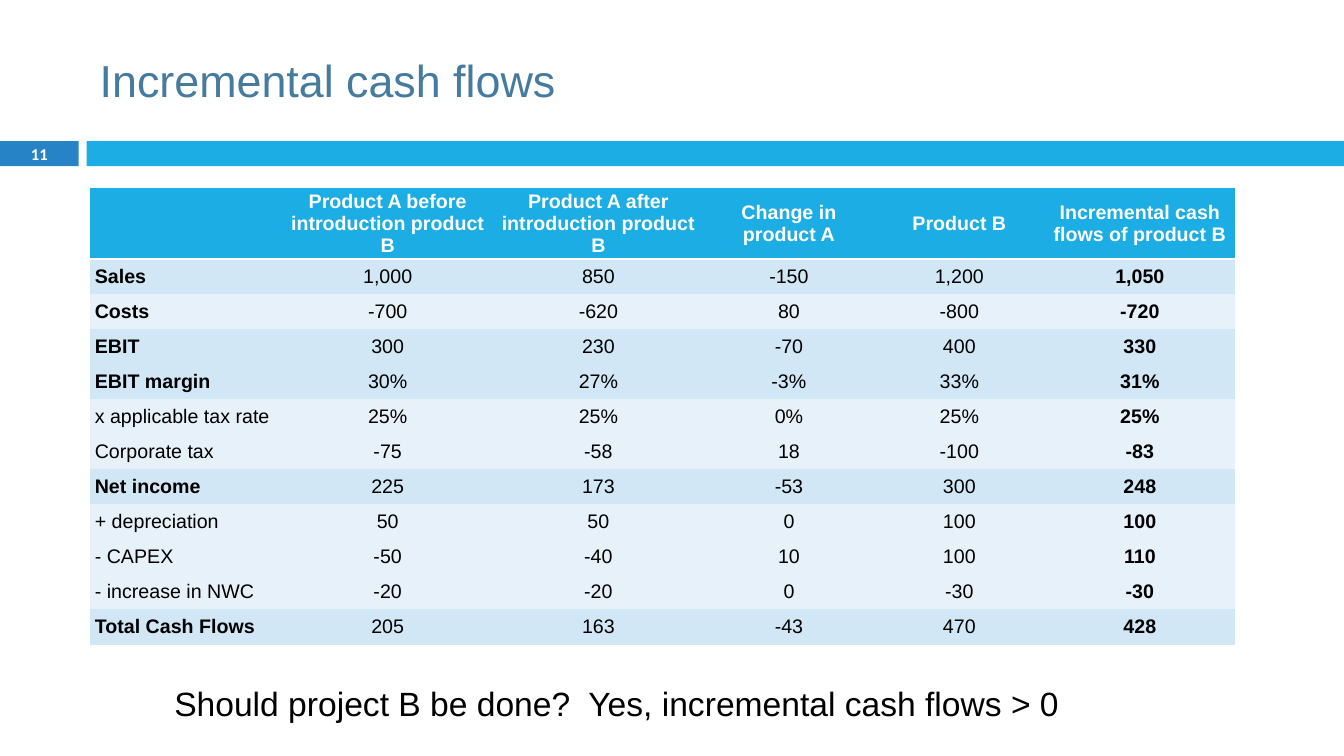
from lxml import etree
from pptx import Presentation
from pptx.dml.color import RGBColor
from pptx.enum.shapes import MSO_SHAPE
from pptx.enum.text import MSO_ANCHOR, PP_ALIGN
from pptx.oxml.ns import qn
from pptx.util import Inches, Pt

RECTANGLE = MSO_SHAPE.RECTANGLE
TOP, MIDDLE = MSO_ANCHOR.TOP, MSO_ANCHOR.MIDDLE
LEFT, CENTER = PP_ALIGN.LEFT, PP_ALIGN.CENTER

WHITE = RGBColor(0xFF, 0xFF, 0xFF)
BLACK = RGBColor(0x00, 0x00, 0x00)
STEEL = RGBColor(0x45, 0x7B, 0x9E)
BLUE = RGBColor(0x26, 0x83, 0xC6)
CYAN = RGBColor(0x1C, 0xAD, 0xE4)
PALE = RGBColor(0xD1, 0xE7, 0xF6)
PALER = RGBColor(0xE7, 0xF1, 0xFA)

WIDTH, HEIGHT = Inches(13.33), Inches(7.5)
BAR_TOP, BAR_HEIGHT = 18.67, 3.33
NUMBER_WIDTH = 5.85
MARGIN = 6.68
COLUMN_WIDTHS = (14.33, 15.68, 15.68, 12.68, 12.68, 14.18)
HEADER_HEIGHT, ROW_HEIGHT = 9.47, 4.64
PLAIN_TABLE_STYLE = "{2D5ABB26-0587-4C30-8999-92F81FD0307C}"

HEADERS = (
    "",
    "Product A before introduction product B",
    "Product A after introduction product B",
    "Change in product A",
    "Product B",
    "Incremental cash flows of product B",
)
CASH_FLOWS = (
    ("Sales", "1,000", "850", "-150", "1,200", "1,050"),
    ("Costs", "-700", "-620", "80", "-800", "-720"),
    ("EBIT", "300", "230", "-70", "400", "330"),
    ("EBIT margin", "30%", "27%", "-3%", "33%", "31%"),
    ("x applicable tax rate", "25%", "25%", "0%", "25%", "25%"),
    ("Corporate tax", "-75", "-58", "18", "-100", "-83"),
    ("Net income", "225", "173", "-53", "300", "248"),
    ("+ depreciation", "50", "50", "0", "100", "100"),
    ("- CAPEX", "-50", "-40", "10", "100", "110"),
    ("- increase in NWC", "-20", "-20", "0", "-30", "-30"),
    ("Total Cash Flows", "205", "163", "-43", "470", "428"),
)
SUBTOTALS = {"Sales", "EBIT", "EBIT margin", "Net income", "Total Cash Flows"}
BOLD_LABELS = SUBTOTALS | {"Costs"}


def across(percent):
    return round(WIDTH * percent / 100)


def down(percent):
    return round(HEIGHT * percent / 100)


def place(left, top, width, height):
    return across(left), down(top), across(width), down(height)


def apply(target, formats):
    for name, value in formats.items():
        setattr(target, name, value)


def write(para, text, size, color, font="Arial", bold=False, **formats):
    apply(para, formats)
    span = para.add_run()
    span.text = text
    apply(span.font, {"name": font, "size": Pt(size), "bold": bold})
    span.font.color.rgb = color


def add_bar(page, left, width, color):
    bar = page.shapes.add_shape(
        RECTANGLE, *place(left, BAR_TOP, width, BAR_HEIGHT))
    bar.shadow.inherit = False
    bar.fill.solid()
    bar.fill.fore_color.rgb = color
    bar.line.fill.background()


def add_text(page, area, text, size, color, anchor=MIDDLE, **formats):
    frame = page.shapes.add_textbox(*place(*area)).text_frame
    apply(frame, {"word_wrap": True, "vertical_anchor": anchor})
    write(frame.paragraphs[0], text, size, color, **formats)


def fill_cell(cell, text, fill, color, bold, alignment):
    apply(cell, {
        "vertical_anchor": MIDDLE,
        "margin_left": Inches(0.05), "margin_right": Inches(0.05),
        "margin_top": 0, "margin_bottom": 0,
    })
    cell.fill.solid()
    cell.fill.fore_color.rgb = fill
    if text:
        write(cell.text_frame.paragraphs[0], text, 14, color, bold=bold,
              alignment=alignment, space_before=Pt(2), space_after=Pt(2))


def add_header_borders(holder):
    cells = list(holder.element.iter(qn("a:tcPr")))[:len(HEADERS)]
    for properties in cells:
        for position, side in enumerate(("a:lnT", "a:lnB")):
            border = etree.Element(qn(side), w=str(Pt(1)))
            fill = etree.SubElement(border, qn("a:solidFill"))
            etree.SubElement(fill, qn("a:srgbClr"), val=str(WHITE))
            properties.insert(position, border)


def add_cash_flow_table(page):
    heights = [HEADER_HEIGHT] + [ROW_HEIGHT] * len(CASH_FLOWS)
    holder = page.shapes.add_table(
        len(heights), len(HEADERS),
        *place(MARGIN, 24.8, sum(COLUMN_WIDTHS), sum(heights)))
    holder.element.find(".//" + qn("a:tableStyleId")).text = PLAIN_TABLE_STYLE
    table = holder.table
    table.horz_banding = False
    for column, width in zip(table.columns, COLUMN_WIDTHS):
        column.width = across(width)
    for row, height in zip(table.rows, heights):
        row.height = down(height)

    for index, text in enumerate(HEADERS):
        fill_cell(table.cell(0, index), text, CYAN, WHITE, True, CENTER)
    last = len(HEADERS) - 1
    for number, values in enumerate(CASH_FLOWS, start=1):
        label = values[0]
        fill = PALE if label in SUBTOTALS else PALER
        for index, text in enumerate(values):
            bold = index == last or (index == 0 and label in BOLD_LABELS)
            alignment = CENTER if index else LEFT
            fill_cell(table.cell(number, index), text, fill, BLACK, bold,
                      alignment)
    add_header_borders(holder)


def main():
    deck = Presentation()
    apply(deck, {"slide_width": WIDTH, "slide_height": HEIGHT})
    page = deck.slides.add_slide(deck.slide_layouts[6])

    add_bar(page, 0, NUMBER_WIDTH, BLUE)
    add_bar(page, 6.45, 93.55, CYAN)
    add_text(page, (MARGIN, 3.33, 89.2, 14.4), "Incremental cash flows",
             32, STEEL)
    add_text(page, (0, 18.53, NUMBER_WIDTH, 3.6), "11", 11.9, WHITE,
             font="Calibri", bold=True, alignment=CENTER)
    add_cash_flow_table(page)
    add_text(page, (12.23, 87.07, 69.69, 10.4),
             "Should project B be done?  Yes, incremental cash flows > 0",
             24, BLACK, anchor=TOP, line_spacing=1.5, space_before=Pt(7))
    deck.save("out.pptx")


if __name__ == "__main__":
    main()
